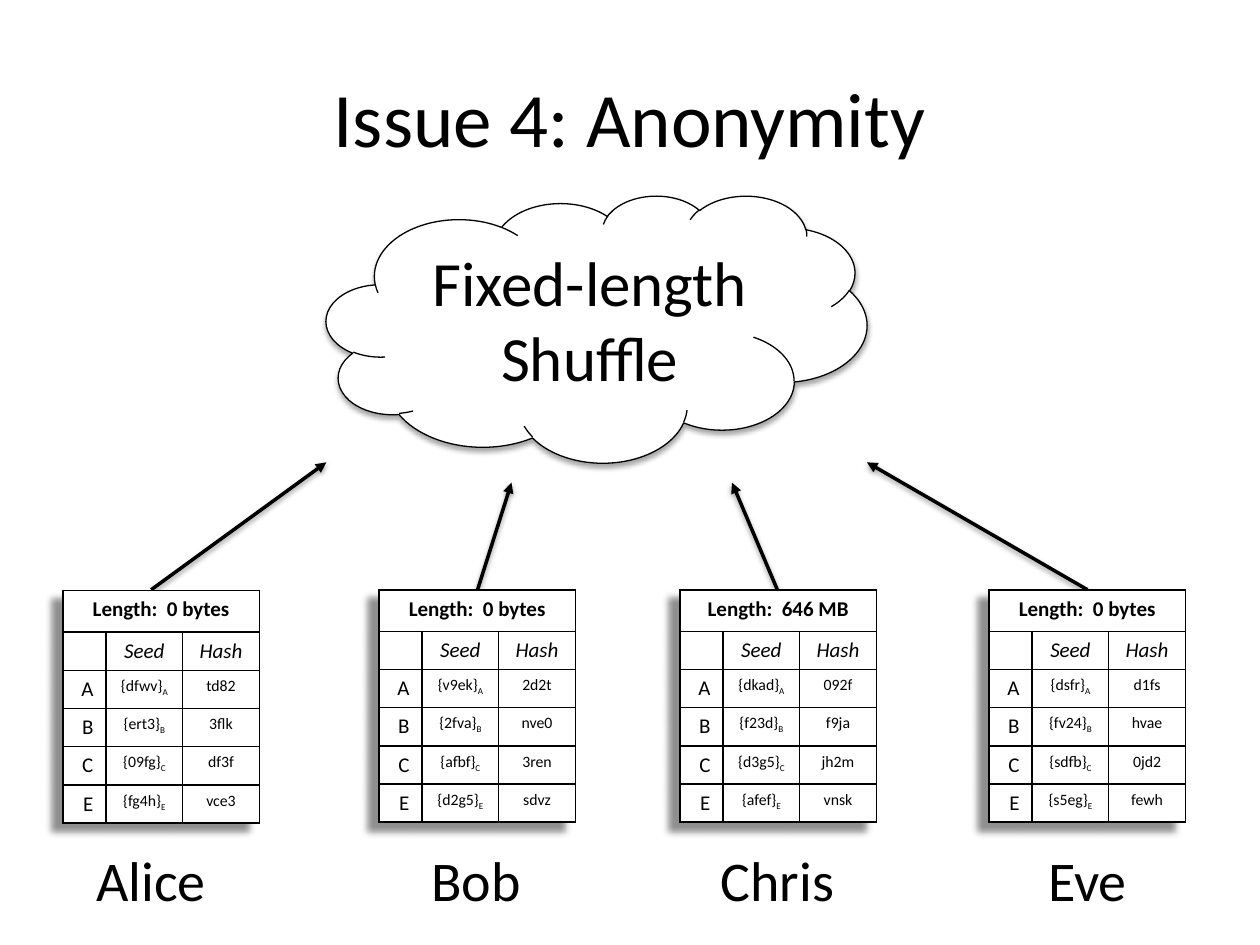
import lxml.etree
import pptx
import pptx.dml.color
import pptx.enum.shapes
import pptx.enum.text
import pptx.oxml
import pptx.oxml.ns
import pptx.util

Pt = pptx.util.Pt
ALIGN = pptx.enum.text.PP_ALIGN
ANCHOR = pptx.enum.text.MSO_ANCHOR
NS = pptx.oxml.ns.nsdecls("a")
BLACK, WHITE = "000000", "FFFFFF"


def colour(value):
    return pptx.dml.color.RGBColor.from_string(value)


def write(paragraph, text, align=ALIGN.CENTER, **formats):
    paragraph.alignment = align
    run = paragraph.add_run()
    run.text = text
    run.font.color.rgb = colour(BLACK)
    for name, value in {"name": "Calibri", **formats}.items():
        setattr(run.font, name, value)
    return run


deck = pptx.Presentation()
deck.slide_width, deck.slide_height = Pt(720), Pt(540)
slide = deck.slides.add_slide(deck.slide_layouts[6])
shapes = slide.shapes
shadows = []  # effect list, opacity %, blur, distance, direction

# Upload arrows from each table to the cloud
uploads = [
    (86.4, 337, 186.5, 264.2),
    (444.2, 337, 418.3, 275.8),
    (272.9, 337, 292.3, 275.8),
    (621.4, 337, 495.4, 264.2),
]
for ends in uploads:
    upload = shapes.add_connector(
        pptx.enum.shapes.MSO_CONNECTOR.STRAIGHT, *[Pt(end) for end in ends])
    upload.line.width = Pt(2)
    upload.line.color.rgb = colour(BLACK)
    upload.line._get_or_add_ln().append(
        pptx.oxml.parse_xml(f'<a:tailEnd {NS} type="triangle"/>'))
    effects = pptx.oxml.parse_xml(f"<a:effectLst {NS}/>")
    upload._element.spPr.append(effects)
    shadows.append((effects, 38, 3.1, 1.6, 90))

# Shuffle cloud
cloud = shapes.add_shape(pptx.enum.shapes.MSO_SHAPE.CLOUD,
                         Pt(186.5), Pt(111.6), Pt(308.9), Pt(152.6))
cloud.fill.solid()
cloud.fill.fore_color.rgb = colour(WHITE)
cloud.line.color.rgb = colour(BLACK)
cloud.line.width = Pt(0.75)
cloud.shadow.inherit = False
effects = cloud._element.spPr.find(pptx.oxml.ns.qn("a:effectLst"))
shadows.append((effects, 35, 3.1, 1.8, 90))

# Title, cloud caption and member names
captions = [
    ("Issue 4: Anonymity", 36, 21.6, 648, 90, 44, ANCHOR.MIDDLE),
    ("Fixed-length Shuffle", 221.8, 135.4, 230.4, 94.5, 36, ANCHOR.TOP),
]
for member, left in [("Alice", 36), ("Bob", 221.8), ("Chris", 393.8), ("Eve", 571)]:
    captions.append((member, left, 479.5, 100.8, 46, 32, ANCHOR.TOP))
for text, left, top, width, height, size, anchor in captions:
    frame = shapes.add_textbox(Pt(left), Pt(top), Pt(width), Pt(height)).text_frame
    frame.word_wrap = True
    frame.vertical_anchor = anchor
    write(frame.paragraphs[0], text, size=Pt(size))

# Seed and hash tables, one per member
tables = [
    (36, 337.5, "0 bytes", ["dfwv", "ert3", "09fg", "fg4h"],
     ["td82", "3flk", "df3f", "vce3"]),
    (216.6, 337, "0 bytes", ["v9ek", "2fva", "afbf", "d2g5"],
     ["2d2t", "nve0", "3ren", "sdvz"]),
    (388.6, 337, "646 MB", ["dkad", "f23d", "d3g5", "afef"],
     ["092f", "f9ja", "jh2m", "vnsk"]),
    (565.2, 337, "0 bytes", ["dsfr", "fv24", "sdfb", "s5eg"],
     ["d1fs", "hvae", "0jd2", "fewh"]),
]
column_widths = [24.6, 43.8, 43.8]
row_heights = [23.8] + [21.8] * 5
for left, top, length, seeds, hashes in tables:
    table = shapes.add_table(6, 3, Pt(left), Pt(top), Pt(sum(column_widths)),
                             Pt(sum(row_heights))).table
    table.first_row = table.horz_banding = False
    for column, width in zip(table.columns, column_widths):
        column.width = Pt(width)
    for row, height in zip(table.rows, row_heights):
        row.height = Pt(height)

    # Cell borders, then fill
    for cell in table.iter_cells():
        properties = cell._tc.get_or_add_tcPr()
        for side in "LRTB":
            properties.append(pptx.oxml.parse_xml(
                f'<a:ln{side} {NS} w="{Pt(1)}"><a:solidFill>'
                f'<a:srgbClr val="{BLACK}"/></a:solidFill></a:ln{side}>'))
        cell.fill.solid()
        cell.fill.fore_color.rgb = colour(WHITE)

    # Headings
    table.cell(0, 0).merge(table.cell(0, 2))
    write(table.cell(0, 0).text_frame.paragraphs[0], f"Length:  {length}",
          size=Pt(12), bold=True)
    table.cell(1, 0).text_frame.paragraphs[0]._p.append(
        pptx.oxml.parse_xml(f'<a:endParaRPr {NS} sz="1200"/>'))
    for column, heading in enumerate(["Seed", "Hash"], 1):
        write(table.cell(1, column).text_frame.paragraphs[0], heading,
              size=Pt(12), italic=True)

    # One row per recipient
    for row, (key, seed, digest) in enumerate(zip("ABCE", seeds, hashes), 2):
        key_line, seed_line, hash_line = [
            table.cell(row, column).text_frame.paragraphs[0] for column in range(3)]
        write(key_line, key, ALIGN.RIGHT, size=Pt(12))
        write(seed_line, f"{{{seed}}}", size=Pt(9))
        subscript = write(seed_line, key, size=Pt(9))
        subscript._r.get_or_add_rPr().set("baseline", "-25000")
        write(hash_line, digest, size=Pt(9))

    effects = pptx.oxml.parse_xml(f"<a:effectLst {NS}/>")
    table._tbl.tblPr.insert(0, effects)
    shadows.append((effects, 43, 4, 8, 142))

# Shadows
for effects, opacity, blur, distance, direction in shadows:
    effects.append(pptx.oxml.parse_xml(
        f'<a:outerShdw {NS} blurRad="{Pt(blur)}" dist="{Pt(distance)}" '
        f'dir="{direction * 60000}" rotWithShape="0"><a:srgbClr val="{BLACK}">'
        f'<a:alpha val="{opacity * 1000}"/></a:srgbClr></a:outerShdw>'))

deck.save("out.pptx")
